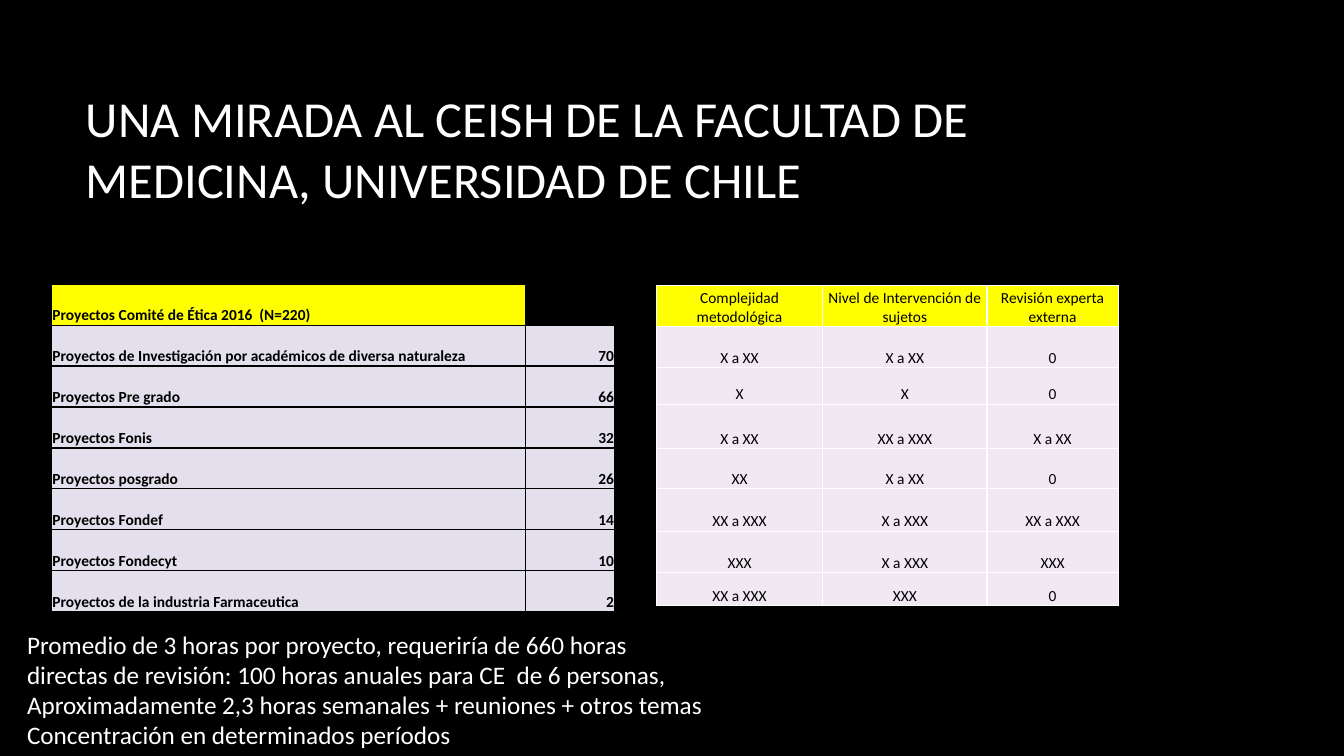
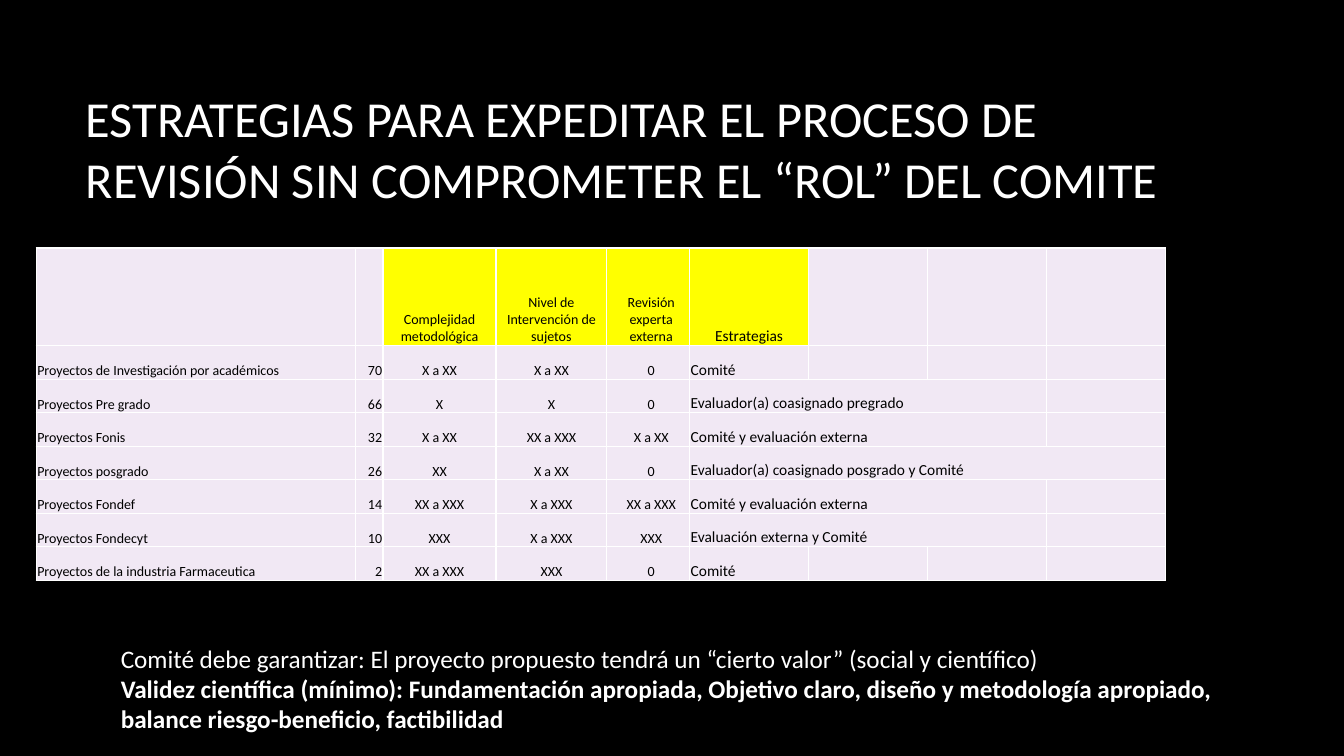
"""Build two slides on the projects reviewed by an ethics committee."""
from lxml import etree
from pptx import Presentation
from pptx.dml.color import RGBColor
from pptx.enum import text as t
from pptx.oxml import ns
from pptx.util import Inches, Pt

COLORS = {
    "black": "000000",
    "white": "FFFFFF",
    "yellow": "FFFF00",
    "lavender": "E4DFEC",
    "pink": "F1E8F4",
}
FONT = "Calibri"
LEFT, CENTER, RIGHT = t.PP_ALIGN.LEFT, t.PP_ALIGN.CENTER, t.PP_ALIGN.RIGHT

RATING_HEADERS = ["Complejidad metodológica", "Nivel de Intervención de sujetos",
                  "Revisión experta externa"]
PROJECTS = [
    ["Proyectos de Investigación por académicos", "70", "X a XX", "X a XX", "0"],
    ["Proyectos Pre grado", "66", "X", "X", "0"],
    ["Proyectos Fonis", "32", "X a XX", "XX a XXX", "X a XX"],
    ["Proyectos posgrado", "26", "XX", "X a XX", "0"],
    ["Proyectos Fondef", "14", "XX a XXX", "X a XXX", "XX a XXX"],
    ["Proyectos Fondecyt", "10", "XXX", "X a XXX", "XXX"],
    ["Proyectos de la industria Farmaceutica", "2", "XX a XXX", "XXX", "0"],
]
STRATEGIES = [
    ("Comité", 1),
    ("Evaluador(a) coasignado pregrado", 3),
    ("Comité y evaluación externa", 3),
    ("Evaluador(a) coasignado posgrado y Comité", 4),
    ("Comité y evaluación externa", 3),
    ("Evaluación externa y Comité", 3),
    ("Comité", 1),
]


def rgb(name):
    """Return the named colour."""
    return RGBColor.from_string(COLORS[name])


def add_span(para, words, size, color, bold=False):
    """Add one formatted run to a paragraph."""
    span = para.add_run()
    span.text = words
    span.font.name = FONT
    span.font.size = Pt(size)
    span.font.bold = bold
    span.font.color.rgb = rgb(color)


def prepare_layout(deck):
    """Set the shared background and title position and return the layout."""
    fill = deck.slide_master.background.fill
    fill.solid()
    fill.fore_color.rgb = rgb("black")
    layout = deck.slide_layouts.get_by_name("Title Only")
    title = layout.placeholders[0]
    title.left, title.top = Inches(0.75), Inches(0.67)
    title.width, title.height = Inches(11.08), Inches(1.59)
    title.text_frame.vertical_anchor = t.MSO_ANCHOR.MIDDLE
    return layout


def add_page(deck, layout, heading):
    """Add a page with its title."""
    page = deck.slides.add_slide(layout)
    para = page.shapes.title.text_frame.paragraphs[0]
    para.alignment = LEFT
    add_span(para, heading, 36, "white")
    return page


def add_note(page, left, top, width, height, lines):
    """Add a text box with one paragraph per (words, bold) pair."""
    box = page.shapes.add_textbox(Inches(left), Inches(top), Inches(width), Inches(height))
    frame = box.text_frame
    frame.word_wrap = True
    for index, (words, bold) in enumerate(lines):
        para = frame.add_paragraph() if index else frame.paragraphs[0]
        add_span(para, words, 18, "white", bold)


def set_borders(cell, color):
    """Draw a one-point line on each side of a cell."""
    properties = cell._tc.get_or_add_tcPr()
    for side in ("a:lnL", "a:lnR", "a:lnT", "a:lnB"):
        line = etree.SubElement(properties, ns.qn(side), w=str(Pt(1)))
        solid = etree.SubElement(line, ns.qn("a:solidFill"))
        etree.SubElement(solid, ns.qn("a:srgbClr"), val=COLORS[color])


def fill_cell(cell, words, fill, line, align, size, bold):
    """Format a cell and write its words; None leaves it unfilled."""
    set_borders(cell, line)
    cell.margin_left = cell.margin_right = cell.margin_top = Inches(0.01)
    cell.margin_bottom = 0
    cell.vertical_anchor = t.MSO_ANCHOR.BOTTOM
    if words is None:
        cell.fill.background()
    else:
        cell.fill.solid()
        cell.fill.fore_color.rgb = rgb(fill)
    if words:
        para = cell.text_frame.paragraphs[0]
        para.alignment = align
        add_span(para, words, size, "black", bold)


def add_grid(page, left, top, widths, heights, rows, aligns, size=11,
             fill="pink", line="white", header_align=CENTER, bold=False):
    """Add a table whose first row is a yellow header and return it."""
    frame = page.shapes.add_table(len(rows), len(widths), Inches(left), Inches(top),
                                  Inches(sum(widths)), Inches(sum(heights)))
    grid = frame.table
    grid.first_row = grid.horz_banding = False
    for column, width in zip(grid.columns, widths):
        column.width = Inches(width)
    for row, height in zip(grid.rows, heights):
        row.height = Inches(height)
    for y, row in enumerate(rows):
        for x, words in enumerate(row):
            header = y == 0
            fill_cell(grid.cell(y, x), words, "yellow" if header and words else fill,
                      line, header_align if header else aligns[x], size, bold)
    return grid


def build_overview(deck, layout):
    """Build the page with project counts and ratings."""
    page = add_page(deck, layout,
                    "UNA MIRADA AL CEISH DE LA FACULTAD DE MEDICINA, UNIVERSIDAD DE CHILE")
    counts = [["Proyectos Comité de Ética 2016  (N=220)", None]]
    counts += [project[:2] for project in PROJECTS]
    counts[1][0] += " de diversa naturaleza"
    add_grid(page, 0.51, 2.82, [4.7, 0.89], [3.25 / 8] * 8, counts, [LEFT, RIGHT],
             fill="lavender", line="black", header_align=LEFT, bold=True)
    ratings = [RATING_HEADERS] + [project[2:] for project in PROJECTS]
    add_grid(page, 6.51, 2.83, [1.65, 1.63, 1.3],
             [0.41, 0.41, 0.36, 0.44, 0.4, 0.42, 0.41, 0.33], ratings, [CENTER] * 3)
    add_note(page, 0.17, 6.19, 7.3, 1.31, [
        ("Promedio de 3 horas por proyecto, requeriría de 660 horas", False),
        ("directas de revisión: 100 horas anuales para CE  de 6 personas,", False),
        ("Aproximadamente 2,3 horas semanales + reuniones + otros temas", False),
        ("Concentración en determinados períodos", False),
    ])


def build_strategies(deck, layout):
    """Build the page that pairs each project type with a strategy."""
    page = add_page(deck, layout, "ESTRATEGIAS PARA EXPEDITAR EL PROCESO DE REVISIÓN "
                                  "SIN COMPROMETER EL “ROL” DEL COMITE")
    add_note(page, 1.1, 6.33, 11.3, 1.02, [
        ("Comité debe garantizar: El proyecto propuesto tendrá un “cierto valor” "
         "(social y científico)", False),
        ("Validez científica (mínimo): Fundamentación apropiada, Objetivo claro, diseño y "
         "metodología apropiado, balance riesgo-beneficio, factibilidad", True),
    ])
    top, header = 2.46, 0.97
    heights = [header] + [(3.3 - header) / len(PROJECTS)] * len(PROJECTS)
    add_grid(page, 0.36, top, [3.17, 0.27, 1.12, 1.1, 0.88], heights,
             [["", ""] + RATING_HEADERS] + PROJECTS,
             [LEFT, RIGHT, CENTER, CENTER, CENTER], size=10)
    names = ["Estrategias"] + [name for name, _ in STRATEGIES]
    grid = add_grid(page, 6.84, top, [1.18] * 4, heights,
                    [[name, "", "", ""] for name in names], [LEFT] * 4)
    for y, (_, columns) in enumerate(STRATEGIES, 1):
        if columns > 1:
            grid.cell(y, 0).merge(grid.cell(y, columns - 1))


def main():
    """Build and save the deck."""
    deck = Presentation()
    deck.slide_width, deck.slide_height = Inches(13.33), Inches(7.5)
    layout = prepare_layout(deck)
    build_overview(deck, layout)
    build_strategies(deck, layout)
    deck.save("out.pptx")


if __name__ == "__main__":
    main()
